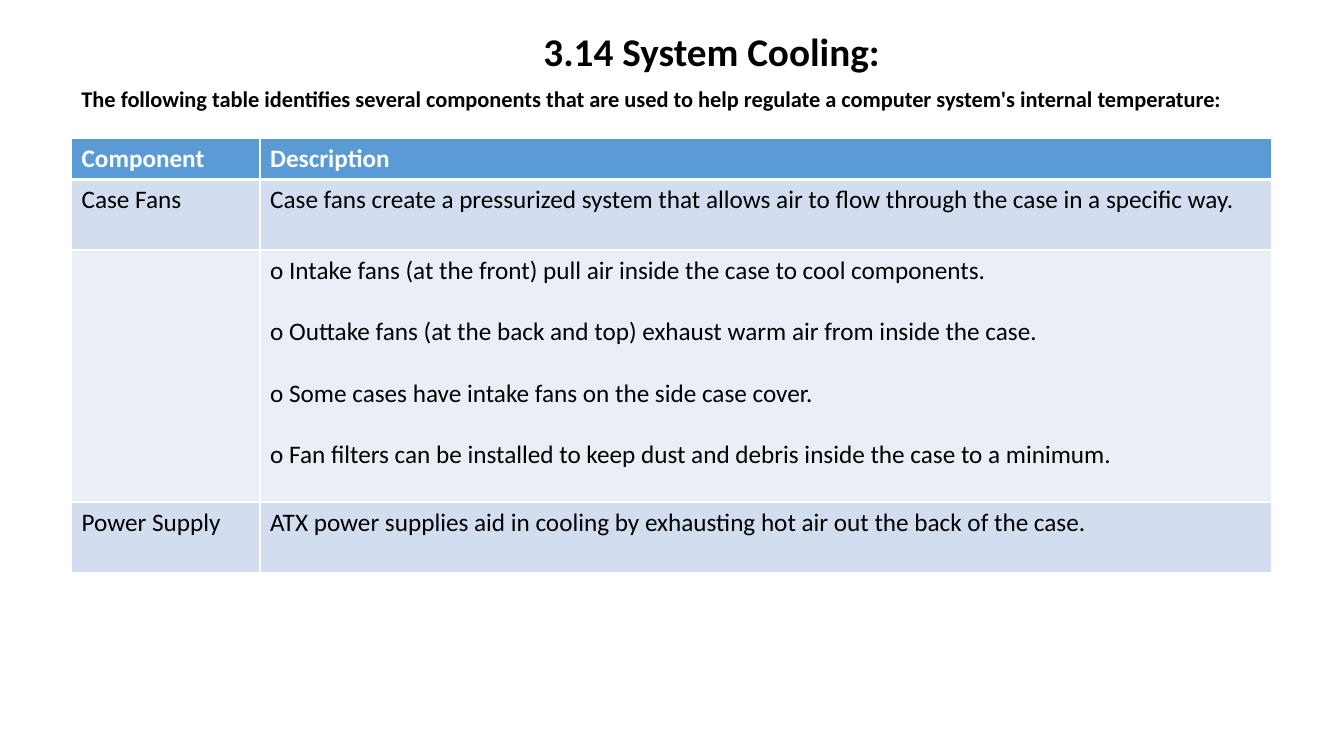
import pptx
import pptx.util
import pptx.dml.color
import pptx.enum.text
import pptx.oxml
import pptx.oxml.ns

Inches, Pt = pptx.util.Inches, pptx.util.Pt
COLORS = {"text": "000000", "white": "FFFFFF", "header": "5B9BD5",
          "band": "D2DEEF", "light": "EAEFF7"}


def write(tf, lines, color, gap=0, **formats):
    """Fill a text frame with one left-aligned paragraph per line."""
    for i, line in enumerate(lines):
        p = tf.paragraphs[0] if i == 0 else tf.add_paragraph()
        p.alignment = pptx.enum.text.PP_ALIGN.LEFT
        p.space_before = Pt(gap if i else 0)
        p.text = line
        p.font.name = "Calibri"
        p.font.color.rgb = pptx.dml.color.RGBColor.from_string(COLORS[color])
        for name, value in formats.items():
            setattr(p.font, name, value)


def add_border(cell, side, width):
    """Draw a white line on one side of a table cell."""
    cell._tc.get_or_add_tcPr().append(pptx.oxml.parse_xml(
        f'<a:ln{side} {pptx.oxml.ns.nsdecls("a")} w="{Pt(width)}"><a:solidFill>'
        f'<a:srgbClr val="{COLORS["white"]}"/></a:solidFill></a:ln{side}>'))


prs = pptx.Presentation()
prs.slide_width, prs.slide_height = Inches(13.33), Inches(7.5)
s = prs.slides.add_slide(prs.slide_layouts[5])

# Title
title = s.shapes.title
box = {"left": 5.29, "top": 0.22, "width": 3.58, "height": 0.57}
for name, value in box.items():
    setattr(title, name, Inches(value))
tf = title.text_frame
tf.word_wrap = False
tf.auto_size = pptx.enum.text.MSO_AUTO_SIZE.SHAPE_TO_FIT_TEXT
tf.vertical_anchor = pptx.enum.text.MSO_ANCHOR.TOP
write(tf, ["3.14 System Cooling:"], "text", size=Pt(28), bold=True)

# Introduction
intro = s.shapes.add_textbox(Inches(0.71), Inches(0.8), Inches(12.44), Inches(0.37))
tf = intro.text_frame
tf.word_wrap = True
tf.auto_size = pptx.enum.text.MSO_AUTO_SIZE.SHAPE_TO_FIT_TEXT
write(tf, ["The following table identifies several components that are used to help "
           "regulate a computer system's internal temperature:"],
      "text", size=Pt(16), bold=True)

# Cooling components: row height, fill, component, description lines
rows = [
    (0.41, "header", "Component", ["Description"]),
    (0.7, "band", "Case Fans",
     ["Case fans create a pressurized system that allows air to flow through the case "
      "in a specific way."]),
    (2.5, "light", "",
     ["o Intake fans (at the front) pull air inside the case to cool components.",
      "o Outtake fans (at the back and top) exhaust warm air from inside the case.",
      "o Some cases have intake fans on the side case cover.",
      "o Fan filters can be installed to keep dust and debris inside the case to a minimum."]),
    (0.7, "band", "Power Supply",
     ["ATX power supplies aid in cooling by exhausting hot air out the back of the case."]),
]
table = s.shapes.add_table(len(rows), 2, Inches(0.71), Inches(1.37),
                           Inches(11.9), Inches(4.31)).table
for column, width in zip(table.columns, (1.87, 10.03)):
    column.width = Inches(width)

for i, (height, fill, component, description) in enumerate(rows):
    table.rows[i].height = Inches(height)
    is_header = i == 0
    for cell, lines in zip(table.rows[i].cells, ([component], description)):
        write(cell.text_frame, lines, "white" if is_header else "text", gap=22,
              size=Pt(18), bold=is_header)
        borders = {"L": 1, "R": 1, "T": 3 if i == 1 else 1, "B": 3 if is_header else 1}
        for side, width in borders.items():
            add_border(cell, side, width)
        cell.fill.solid()
        cell.fill.fore_color.rgb = pptx.dml.color.RGBColor.from_string(COLORS[fill])

prs.save("out.pptx")
